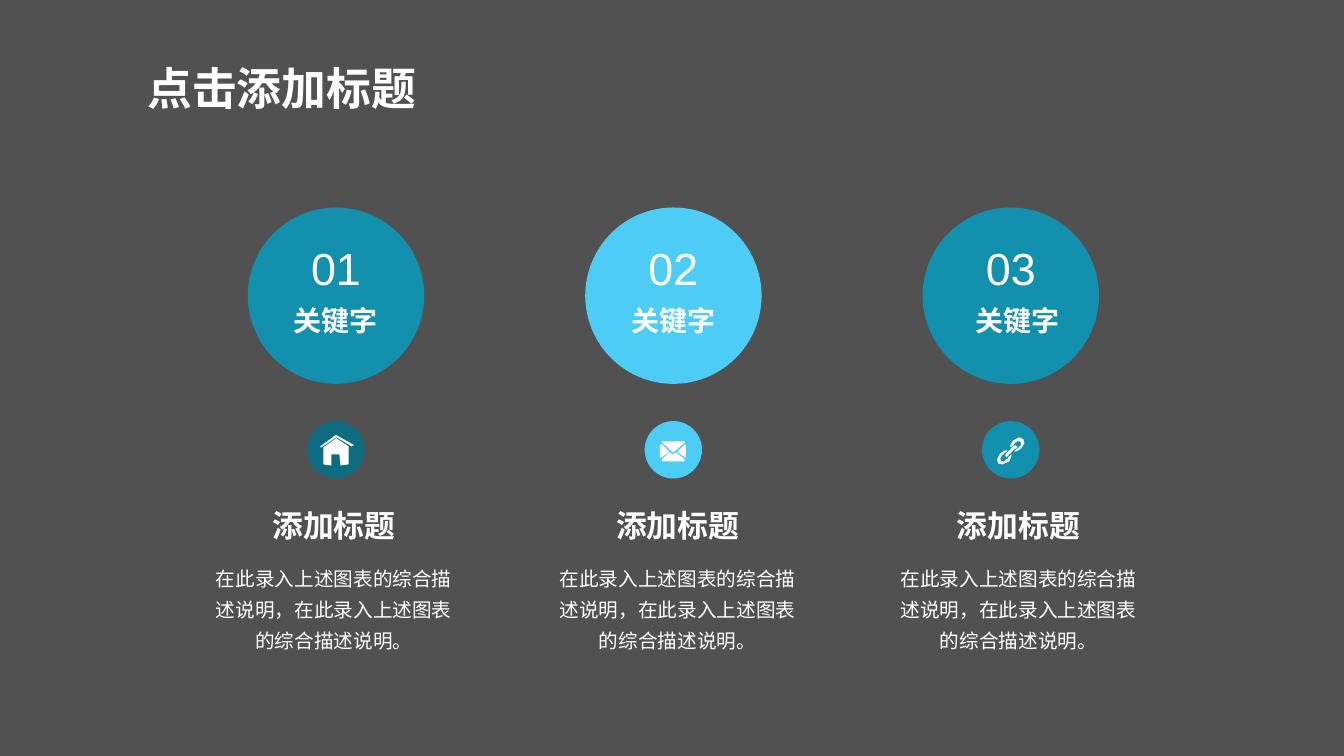
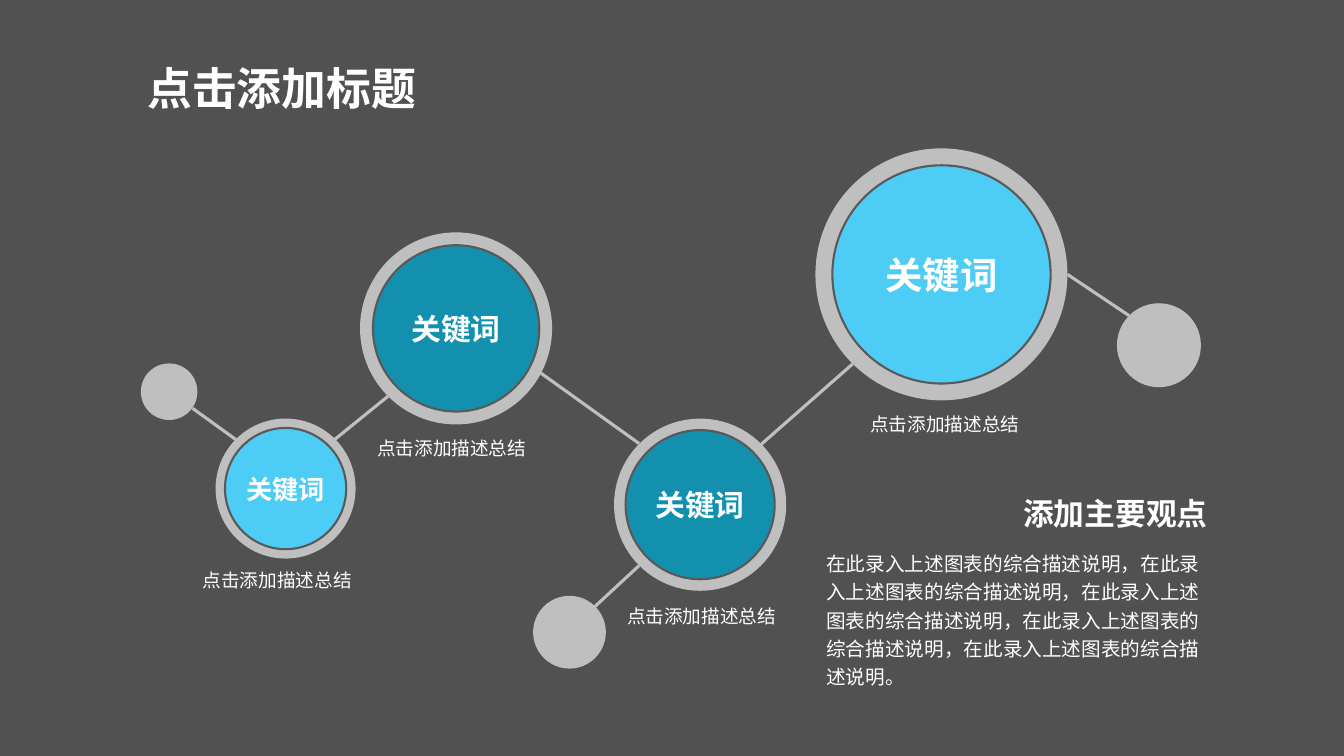
from lxml.etree import SubElement
from pptx import Presentation
from pptx.dml.color import RGBColor
from pptx.enum.shapes import MSO_CONNECTOR, MSO_SHAPE
from pptx.enum.text import MSO_ANCHOR, MSO_AUTO_SIZE, PP_ALIGN
from pptx.oxml.ns import qn
from pptx.util import Pt

COLORS = {
    "background": "515151",
    "white": "FFFFFF",
    "teal": "1390AD",
    "dark_teal": "0E6C82",
    "sky": "4DCDF5",
    "grey": "BFBFBF",
    "outline": "595959",
}
CJK_FONT = "Noto Sans CJK SC"
LATIN_FONT = "Arial"
TITLE = "点击添加标题"
SENTENCE = "在此录入上述图表的综合描述说明"

# Icon outlines on a square grid as wide as the icon's disc
ICON_GRID = 57
HOUSE = [
    [(16, 26), (16, 43), (24, 44), (24, 33), (32, 33), (33, 44), (41, 43), (41, 25), (29, 17)],
    [(45, 23), (29, 14), (28, 14), (13, 25), (13, 26), (14, 26), (29, 16), (44, 25), (46, 24)],
]
ENVELOPE = [
    [(27, 30), (28.5, 31), (30, 30), (40, 21), (39, 20), (17, 20), (17, 21)],
    [(41, 36), (41, 24), (40, 23), (33, 30), (33, 31), (40, 36)],
    [(40, 38), (31, 31), (28.5, 33), (25, 31), (17, 38), (17, 40), (39, 40)],
    [(15, 36), (15, 24), (17, 23), (24, 30), (24, 31), (17, 36)],
]
CHAIN = [
    [(32, 30), (33, 29), (35, 27), (36, 27), (37, 25), (39, 24), (38.5, 20), (35, 20),
     (33, 21), (32, 23), (30, 25), (28, 26), (28, 24), (31, 19), (37, 16), (41, 18),
     (42, 22), (39, 27), (34, 30)],
    [(33, 24), (35, 26), (32, 28), (27, 33), (24, 36), (23, 34), (24, 32), (31, 25)],
    [(25, 29), (25, 30), (22, 32), (20, 34), (18, 37), (19, 40), (22, 40), (24, 38),
     (26, 37), (26, 36), (28, 34), (29, 33), (29, 35), (27, 40), (20, 43), (16.5, 42),
     (15, 38), (18, 32), (23, 29)],
]


def rgb(name):
    return RGBColor.from_string(COLORS[name])


def write(text_frame, text, size, bold=False, align=PP_ALIGN.CENTER, font=CJK_FONT,
          spacing=None, wrap=False):
    text_frame.text = text
    text_frame.word_wrap = wrap
    text_frame.auto_size = MSO_AUTO_SIZE.NONE
    paragraph = text_frame.paragraphs[0]
    paragraph.alignment = align
    if spacing:
        paragraph.line_spacing = spacing
    run = paragraph.runs[0]
    run.font.size = Pt(size)
    run.font.bold = bold
    run.font.color.rgb = rgb("white")
    run.font.name = font
    east_asian = SubElement(run.font._element, qn("a:ea"))
    east_asian.set("typeface", CJK_FONT)


def add_label(slide, left, top, width, height, text, size, **style):
    shape = slide.shapes.add_textbox(Pt(left), Pt(top), Pt(width), Pt(height))
    write(shape.text_frame, text, size, **style)


def paint(shape, color):
    shape.shadow.inherit = False
    shape.fill.solid()
    shape.fill.fore_color.rgb = rgb(color)
    shape.line.fill.background()


def add_disc(slide, left, top, diameter, color):
    shape = slide.shapes.add_shape(
        MSO_SHAPE.OVAL, Pt(left), Pt(top), Pt(diameter), Pt(diameter))
    paint(shape, color)
    return shape


def add_icon(slide, left, top, diameter, color, outlines):
    add_disc(slide, left, top, diameter, color)
    for start, *others in outlines:
        builder = slide.shapes.build_freeform(*start, scale=Pt(diameter) / ICON_GRID)
        builder.add_line_segments(others, close=True)
        paint(builder.convert_to_shape(Pt(left), Pt(top)), "white")


def add_link(slide, start_x, start_y, end_x, end_y):
    connector = slide.shapes.add_connector(
        MSO_CONNECTOR.STRAIGHT, Pt(start_x), Pt(start_y), Pt(end_x), Pt(end_y))
    connector.line.color.rgb = rgb("grey")
    connector.line.width = Pt(2.25)
    SubElement(connector._element.spPr, qn("a:effectLst"))


def add_titled_slide(presentation):
    slide = presentation.slides.add_slide(presentation.slide_layouts[5])
    title = slide.shapes.title
    title.left, title.top, title.width, title.height = Pt(98), Pt(39.6), Pt(208), Pt(46)
    write(title.text_frame, TITLE, 32, bold=True, align=PP_ALIGN.LEFT, font=LATIN_FONT)
    title.text_frame.vertical_anchor = MSO_ANCHOR.TOP
    return slide


def add_keyword_column(slide, left, top, number, color, icon_color, outlines,
                       keyword_shift, caption_shift):
    """Place one column; the shifts move its texts off the disc's centre line."""
    diameter, icon_size = 126, 41
    center = left + diameter / 2
    add_disc(slide, left, top, diameter, color)
    add_label(slide, center - 25, top + 20, 50, 46, number, 32, font=LATIN_FONT)
    add_label(slide, center - 37.5 + keyword_shift, top + 65, 75, 31.5, "关键字", 20, bold=True)
    add_icon(slide, center - icon_size / 2, top + 152.6, icon_size, icon_color, outlines)
    caption_center = center + caption_shift
    add_label(slide, caption_center - 52, top + 210.5, 104, 34, "添加标题", 22, bold=True)
    add_label(slide, caption_center - 95, top + 248.5, 190, 73.5, f"{SENTENCE}，{SENTENCE[:1]}"
              f"{SENTENCE[1:]}。", 14, spacing=1.3, wrap=True)


def add_keyword_node(slide, left, top, diameter, color, size, caption_left, caption_top):
    rim = diameter * 0.067
    add_disc(slide, left, top, diameter, "grey")
    core = add_disc(slide, left + rim, top + rim, diameter - 2 * rim, color)
    core.line.color.rgb = rgb("outline")
    core.line.width = Pt(1.5)
    write(core.text_frame, "关键词", size, bold=True)
    core.text_frame.vertical_anchor = MSO_ANCHOR.MIDDLE
    add_label(slide, caption_left, caption_top, 143, 26, "点击添加描述总结", 13.3,
              spacing=Pt(18.8), wrap=True)


def add_summary(slide, left, top, width):
    add_label(slide, left, top, width - 1.5, 36, "添加主要观点", 22, bold=True,
              align=PP_ALIGN.RIGHT, wrap=True)
    add_label(slide, left, top + 37.4, width, 109, "，".join([SENTENCE] * 5) + "。", 14,
              align=PP_ALIGN.LEFT, spacing=1.2, wrap=True)


def build_columns_slide(presentation):
    slide = add_titled_slide(presentation)
    columns = [
        ("01", "teal", "dark_teal", HOUSE, -0.5, -1.5),
        ("02", "sky", "sky", ENVELOPE, 0, 3),
        ("03", "teal", "teal", CHAIN, 5, 5.5),
    ]
    for index, column in enumerate(columns):
        add_keyword_column(slide, 177 + 241 * index, 148.2, *column)


def build_network_slide(presentation):
    slide = add_titled_slide(presentation)
    nodes = [
        (154, 299, 100, "sky", 18.7, 126.5, 400.3),
        (257.2, 166, 137.2, "teal", 21.3, 251.2, 306),
        (438.6, 299, 123, "teal", 21.3, 429.7, 425.5),
        (582.5, 106, 180, "sky", 26.7, 603.4, 288.7),
    ]
    for node in nodes:
        add_keyword_node(slide, *node)
    links = [
        (239, 314, 277.2, 283),
        (385.2, 265.7, 456.5, 316.8),
        (543.6, 317.5, 609, 260),
        (137.5, 291.6, 168.5, 314),
        (424.8, 433.4, 456.5, 404),
        (762.5, 196, 806.4, 225.4),
    ]
    for link in links:
        add_link(slide, *link)
    for left, top, diameter in [(100.6, 259.6, 40.4), (380.8, 425.6, 52), (797.8, 216.6, 60)]:
        add_disc(slide, left, top, diameter, "grey")
    add_summary(slide, 583.2, 350, 288)


def main():
    presentation = Presentation()
    presentation.slide_width, presentation.slide_height = Pt(960), Pt(540)
    background = presentation.slide_master.background.fill
    background.solid()
    background.fore_color.rgb = rgb("background")
    build_columns_slide(presentation)
    build_network_slide(presentation)
    presentation.save("out.pptx")


if __name__ == "__main__":
    main()
